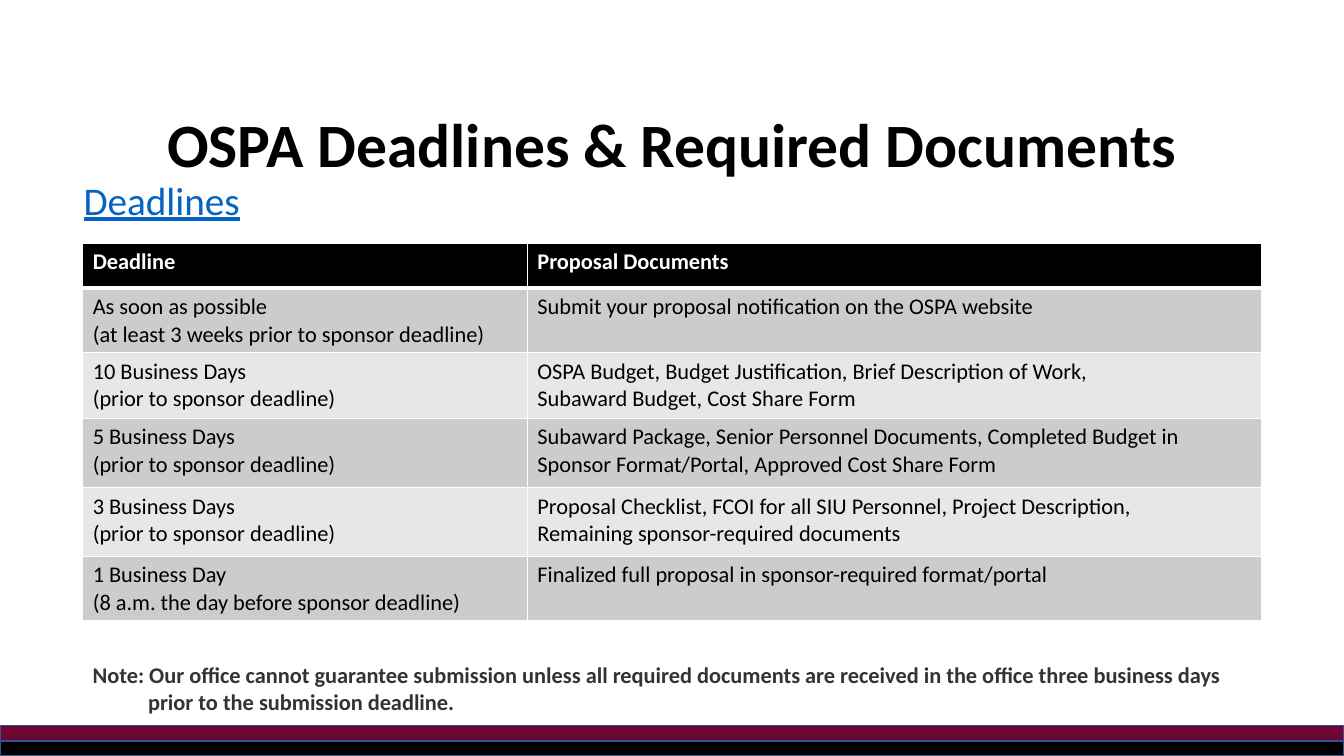
from lxml.etree import SubElement
from pptx import Presentation
from pptx.dml.color import RGBColor
from pptx.enum.shapes import MSO_SHAPE
from pptx.enum.text import MSO_ANCHOR, PP_ALIGN
from pptx.oxml.ns import qn
from pptx.util import Inches, Pt

BLACK = RGBColor(0x00, 0x00, 0x00)
WHITE = RGBColor(0xFF, 0xFF, 0xFF)
MAROON = RGBColor(0x6C, 0x06, 0x33)
BAND_EDGE = RGBColor(0x32, 0x54, 0x91)
LINK_BLUE = RGBColor(0x05, 0x63, 0xC1)
NOTE_GRAY = RGBColor(0x33, 0x33, 0x33)
ROW_FILLS = (RGBColor(0xCC, 0xCC, 0xCC), RGBColor(0xE7, 0xE7, 0xE7))

# A \v breaks the line inside a paragraph
DEADLINES = [
    ("Deadline", "Proposal Documents"),
    ("As soon as possible\v(at least 3 weeks prior to sponsor deadline)",
     "Submit your proposal notification on the OSPA website"),
    ("10 Business Days\v(prior to sponsor deadline)",
     "OSPA Budget, Budget Justification, Brief Description of Work,\v"
     "Subaward Budget, Cost Share Form"),
    ("5 Business Days\v(prior to sponsor deadline)",
     "Subaward Package, Senior Personnel Documents, Completed Budget in "
     "Sponsor Format/Portal, Approved Cost Share Form"),
    ("3 Business Days\v(prior to sponsor deadline)",
     "Proposal Checklist, FCOI for all SIU Personnel, Project Description,\v"
     "Remaining sponsor-required documents"),
    ("1 Business Day\n(8 a.m. the day before sponsor deadline)",
     "Finalized full proposal in sponsor-required format/portal"),
]
COLUMN_WIDTHS = (4.41, 7.28)
ROW_HEIGHTS = (0.45, 0.64, 0.65, 0.69, 0.68, 0.64)


class DeadlineSlide:
    font_name = "Calibri"

    def __init__(self, slide):
        self.slide = slide

    def style(self, paragraph, size, color, bold=False):
        font = paragraph.font
        font.name, font.size, font.bold = self.font_name, Pt(size), bold
        font.color.rgb = color

    def band(self, top, color):
        band = self.slide.shapes.add_shape(
            MSO_SHAPE.RECTANGLE, 0, Inches(top), Inches(13.33), Inches(0.15))
        band.shadow.inherit = False
        band.fill.solid()
        band.fill.fore_color.rgb = color
        band.line.color.rgb = BAND_EDGE
        band.line.width = Pt(1)

    def text(self, box, wording, size, color, bold=False, anchor=MSO_ANCHOR.TOP):
        frame = self.slide.shapes.add_textbox(*map(Inches, box)).text_frame
        frame.word_wrap = True
        frame.vertical_anchor = anchor
        frame.text = wording
        paragraph = frame.paragraphs[0]
        self.style(paragraph, size, color, bold)
        return paragraph

    def borders(self, cell, top, bottom):
        properties = cell._tc.get_or_add_tcPr()
        for side, width in (("L", 1), ("R", 1), ("T", top), ("B", bottom)):
            line = SubElement(properties, qn(f"a:ln{side}"), w=str(Pt(width)))
            fill = SubElement(line, qn("a:solidFill"))
            SubElement(fill, qn("a:srgbClr"), val=str(WHITE))

    def table(self, left, top, rows, widths, heights):
        table = self.slide.shapes.add_table(
            len(rows), len(widths), Inches(left), Inches(top),
            Inches(sum(widths)), Inches(sum(heights))).table
        for column, width in zip(table.columns, widths):
            column.width = Inches(width)
        for r, (row, height) in enumerate(zip(rows, heights)):
            table.rows[r].height = Inches(height)
            header = r == 0
            for c, wording in enumerate(row):
                cell = table.cell(r, c)
                # The rule under the header is heavier
                self.borders(cell, 3 if r == 1 else 1, 3 if header else 1)
                cell.fill.solid()
                cell.fill.fore_color.rgb = BLACK if header else ROW_FILLS[(r - 1) % 2]
                cell.text = wording
                for paragraph in cell.text_frame.paragraphs:
                    self.style(paragraph, 16, WHITE if header else BLACK, header)


def main():
    presentation = Presentation()
    presentation.slide_width = Inches(13.33)
    presentation.slide_height = Inches(7.5)
    page = DeadlineSlide(presentation.slides.add_slide(presentation.slide_layouts[6]))

    # Footer bands
    page.band(7.2, MAROON)
    page.band(7.35, BLACK)

    # Headings
    title = page.text((0.92, 1.08, 11.5, 0.77), "OSPA Deadlines & Required Documents",
                      44, BLACK, True, MSO_ANCHOR.MIDDLE)
    title.alignment = PP_ALIGN.CENTER
    title.line_spacing = 0.9
    subtitle = page.text((0.73, 1.75, 2.09, 0.67), "Deadlines", 28, LINK_BLUE)
    subtitle.line_spacing = 0.9
    subtitle.font.underline = True

    # Deadline table
    page.table(0.82, 2.41, DEADLINES, COLUMN_WIDTHS, ROW_HEIGHTS)

    # Note with a hanging indent
    note = page.text(
        (0.82, 6.51, 11.71, 0.64),
        "Note: Our office cannot guarantee submission unless all required documents are "
        "received in the office three business days prior to the submission deadline.",
        16, NOTE_GRAY, True)
    hanging = note._p.get_or_add_pPr()
    hanging.set("marL", str(Inches(0.55)))
    hanging.set("indent", str(-Inches(0.55)))

    presentation.save("out.pptx")


if __name__ == "__main__":
    main()
